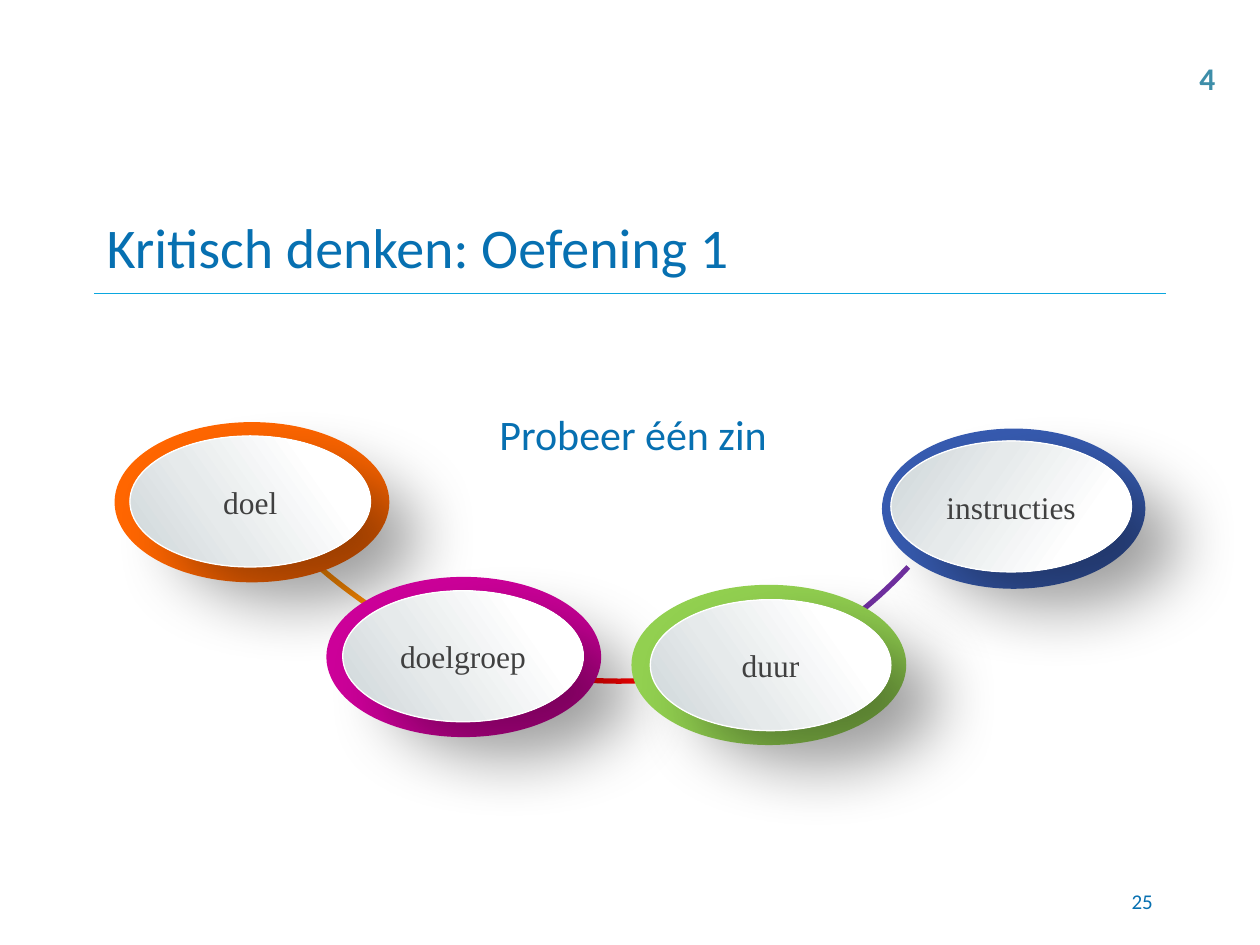
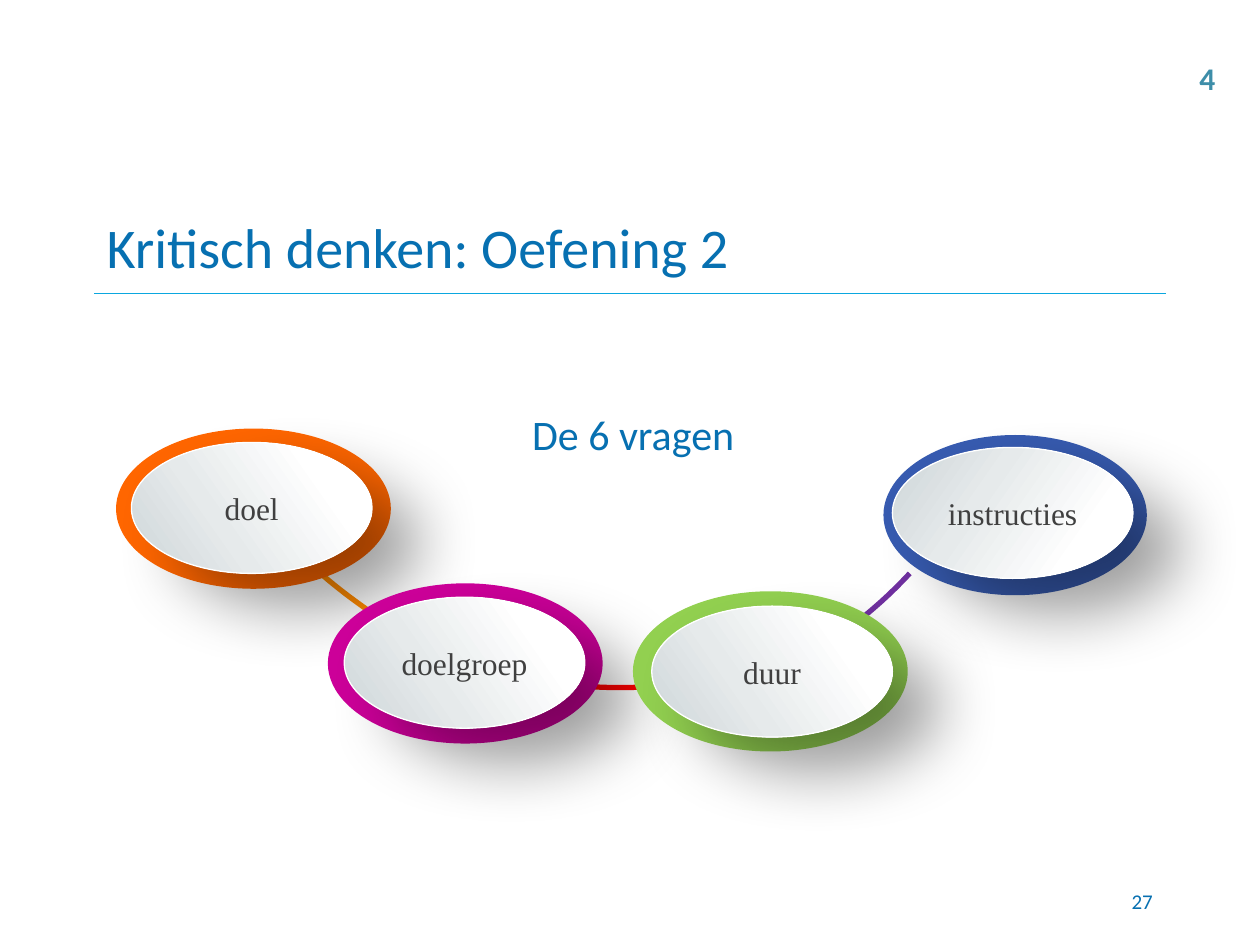
from dataclasses import dataclass

from lxml import etree
from pptx import Presentation
from pptx.dml.color import RGBColor
from pptx.enum.shapes import MSO_CONNECTOR, MSO_SHAPE
from pptx.enum.text import MSO_ANCHOR, PP_ALIGN
from pptx.oxml import parse_xml
from pptx.oxml.ns import nsdecls, qn
from pptx.util import Cm, Pt

OVAL = MSO_SHAPE.OVAL
LINE = MSO_CONNECTOR.STRAIGHT
TOP, MIDDLE = MSO_ANCHOR.TOP, MSO_ANCHOR.MIDDLE
LEFT, CENTER, RIGHT = PP_ALIGN.LEFT, PP_ALIGN.CENTER, PP_ALIGN.RIGHT


@dataclass(frozen=True)
class Theme:
    sans: str = "Calibri"
    serif: str = "Times New Roman"
    blue: str = "0770B1"
    teal: str = "3E8EA9"
    rule: str = "0BA7DF"
    ink: str = "404040"
    white: str = "FFFFFF"
    sheen: tuple = ((0, "CDD5D8"), (37, "E6EAEB"), (77, "FFFFFF"), (100, "FFFFFF"))
    title: int = 32
    lead: int = 24
    label: int = 18
    foot: int = 12


theme = Theme()
rgb = RGBColor.from_string

SHADOW = (
    f'<a:outerShdw {nsdecls("a")} blurRad="{Pt(38)}" dist="{Pt(33)}" '
    'dir="2202000" algn="tl" rotWithShape="0">'
    '<a:srgbClr val="000000"><a:alpha val="39000"/></a:srgbClr></a:outerShdw>'
)

# Heading, lead line, page number, shift of the chain (cm)
pages = [
    ("Kritisch denken: Oefening 1", "Probeer één zin", "25", (0, 0)),
    ("Kritisch denken: Oefening 2", "De 6 vragen", "27", (0.03, 0.13)),
]

# Colour and the four Bézier points of each link (cm)
links = [
    ("7030A0", [(18.31, 11.43), (17.6, 12.2), (16.6, 13), (15.49, 13.44)]),
    ("FF0000", [(11.4, 13.67), (12.2, 13.77), (13.1, 13.74), (13.92, 13.64)]),
    ("FF8A00", [(6.27, 11.28), (6.81, 11.79), (7.47, 12.24), (8.18, 12.7)]),
]

# Label, ring colour, ring corner, ring width, face corner (cm), sheen angle
nodes = [
    ("instructies", "375BB0", (17.78, 8.64), 5.31, (17.96, 8.89), 325),
    ("doel", "FF6600", (2.31, 8.51), 5.54, (2.62, 8.79), 35),
    ("doelgroep", "CC0099", (6.58, 11.63), 5.54, (6.91, 11.91), 35),
    ("duur", "92D050", (12.73, 11.79), 5.54, (13.11, 12.09), 35),
]
RING_H = 3.23
FACE_W, FACE_H = 4.85, 2.64
STEPS = 16


def write(shape, text, size, color, font=theme.sans, align=LEFT, anchor=TOP):
    """Fill a shape with one styled paragraph and return the paragraph."""
    frame = shape.text_frame
    frame.word_wrap = True
    frame.vertical_anchor = anchor
    frame.text = text
    para = frame.paragraphs[0]
    para.alignment = align
    face = para.runs[0].font
    face.name, face.size, face.color.rgb = font, Pt(size), rgb(color)
    return para


def oval(slide, left, top, width, height):
    shape = slide.shapes.add_shape(OVAL, Cm(left), Cm(top), Cm(width), Cm(height))
    shape.shadow.inherit = False
    return shape


deck = Presentation()
deck.slide_width, deck.slide_height = Cm(25.4), Cm(19.05)

for title, lead, number, (dx, dy) in pages:
    slide = deck.slides.add_slide(deck.slide_layouts[6])
    shapes = slide.shapes

    rule = shapes.add_connector(LINE, Cm(1.9), Cm(5.92), Cm(23.5), Cm(5.92))
    rule.line.color.rgb = rgb(theme.rule)
    rule.line.width = Pt(0.75)
    etree.SubElement(rule.element.spPr, qn("a:effectLst"))

    for color, curve in links:
        dots = []
        for step in range(STEPS + 1):
            t = step / STEPS
            mix = ((1 - t) ** 3, 3 * t * (1 - t) ** 2, 3 * t * t * (1 - t), t**3)
            x = sum(m * p[0] for m, p in zip(mix, curve))
            y = sum(m * p[1] for m, p in zip(mix, curve))
            dots.append((Cm(x + dx), Cm(y + dy)))
        path = shapes.build_freeform(*dots[0])
        path.add_line_segments(dots[1:], close=False)
        link = path.convert_to_shape()
        link.shadow.inherit = False
        link.fill.background()
        link.line.color.rgb = rgb(color)
        link.line.width = Pt(3)

    for label, color, (rx, ry), width, (fx, fy), angle in nodes:
        ring = oval(slide, rx + dx, ry + dy, width, RING_H)
        ring.fill.solid()
        ring.fill.fore_color.rgb = rgb(color)
        ring.line.fill.background()

        face = oval(slide, fx + dx, fy + dy, FACE_W, FACE_H)
        face.fill.gradient()
        face.fill.gradient_angle = angle
        props = face.element.spPr
        stops = props.find(".//" + qn("a:gsLst"))
        stops.clear()
        for place, tint in theme.sheen:
            stop = etree.SubElement(stops, qn("a:gs"), pos=str(place * 1000))
            etree.SubElement(stop, qn("a:srgbClr"), val=tint)
        face.line.color.rgb = rgb(theme.white)
        face.line.width = Pt(0.75)
        props.find(qn("a:effectLst")).append(parse_xml(SHADOW))
        frame = face.text_frame
        frame.margin_left = frame.margin_right = 0
        frame.margin_top = frame.margin_bottom = 0
        write(face, label, theme.label, theme.ink, theme.serif, CENTER, MIDDLE)

    box = shapes.add_textbox(Cm(6.58), Cm(7.95), Cm(12.37), Cm(1.37))
    para = write(box, lead, theme.lead, theme.blue, align=CENTER)
    para.line_spacing = 1.15
    para.space_after = Pt(6)

    box = shapes.add_textbox(Cm(1.9), Cm(4.01), Cm(21.6), Cm(1.9))
    write(box, title, theme.title, theme.blue, anchor=MIDDLE)

    box = shapes.add_textbox(Cm(18.21), Cm(17.65), Cm(5.28), Cm(1.02))
    write(box, number, theme.foot, theme.blue, align=RIGHT, anchor=MIDDLE)

    box = shapes.add_textbox(Cm(23.93), Cm(1.07), Cm(0.84), Cm(1.02))
    para = write(box, "4", theme.label, theme.teal)
    para.runs[0].font.bold = True
    box.text_frame.word_wrap = False

deck.save("out.pptx")
